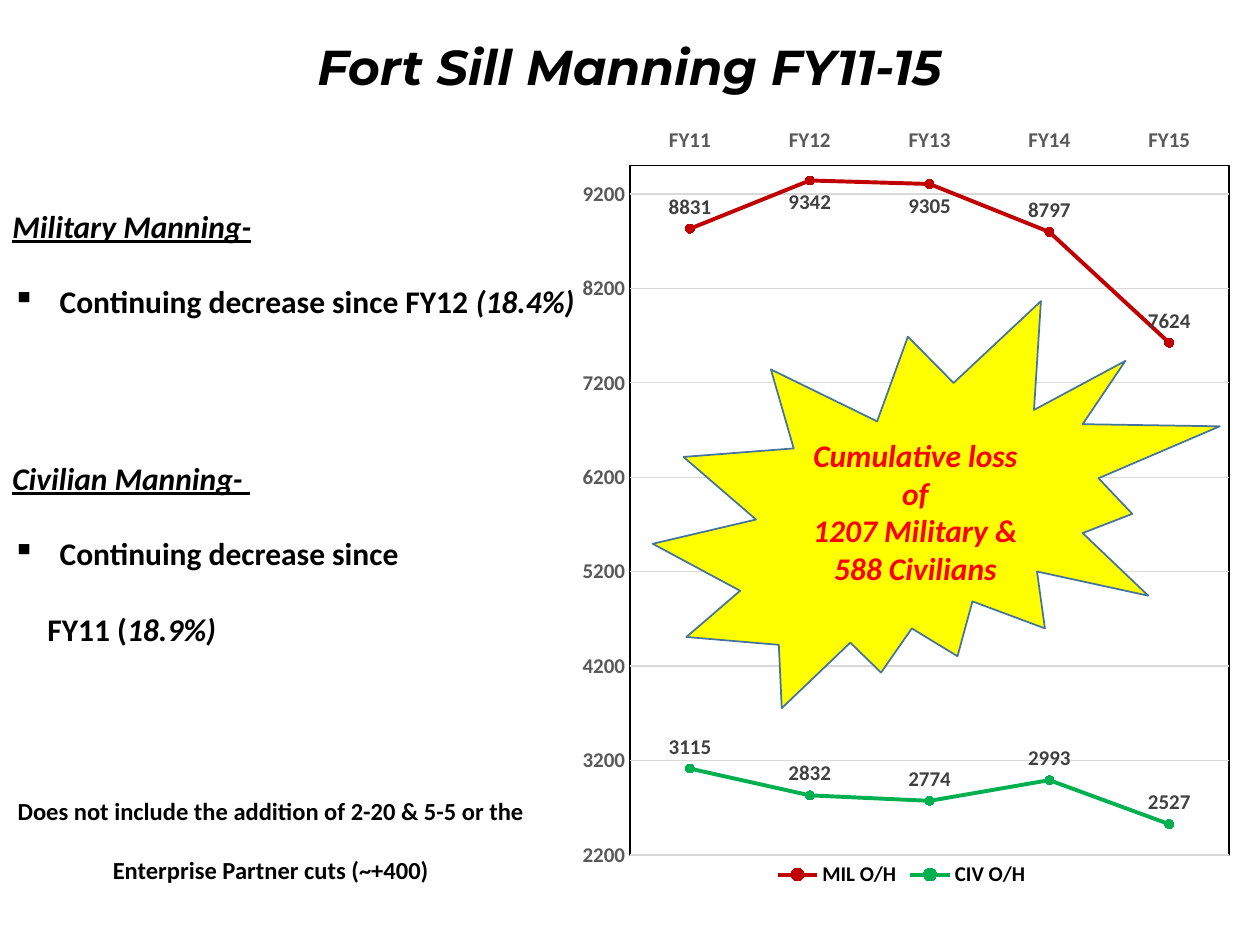
from dataclasses import dataclass, field

import lxml.etree
import pptx
import pptx.chart.data
import pptx.dml.color
import pptx.enum.chart
import pptx.enum.shapes
import pptx.enum.text
import pptx.oxml.ns
import pptx.util

Pt = pptx.util.Pt
qn = pptx.oxml.ns.qn
ALIGN = pptx.enum.text.PP_ALIGN
ANCHOR = pptx.enum.text.MSO_ANCHOR
LABEL = pptx.enum.chart.XL_LABEL_POSITION

YEARS = ["FY11", "FY12", "FY13", "FY14", "FY15"]
PLOT_LAYOUT = {"layoutTarget": "inner", "xMode": "edge", "yMode": "edge",
               "x": 0.109, "y": 0.076, "w": 0.863, "h": 0.877}
HEADING = {"size": Pt(18), "bold": True, "italic": True, "underline": True}
PLAIN = {"size": Pt(18), "bold": True}
ITALIC = {"size": Pt(18), "bold": True, "italic": True}
NOTE = {"size": Pt(14), "bold": True}
CHART_TEXT = {"size": Pt(12), "bold": True}


@dataclass
class Span:
    text: str
    style: dict
    colour: str = "000000"
    face: str = "Calibri"


@dataclass
class Para:
    spans: list[Span]
    format: dict = field(default_factory=dict)
    bullet: bool = False
    indent: float = 0


@dataclass
class Series:
    name: str
    values: list[int]
    colour: str
    marker: str
    below: tuple[int, ...] = ()


def rgb(value: str) -> pptx.dml.color.RGBColor:
    return pptx.dml.color.RGBColor.from_string(value)


def apply(target, values: dict) -> None:
    for name, value in values.items():
        setattr(target, name, value)


def style_font(font, values: dict, colour: str, face: str = "Calibri") -> None:
    apply(font, {"name": face, **values})
    font.color.rgb = rgb(colour)


def style_line(line, colour: str, width: float) -> None:
    line.color.rgb = rgb(colour)
    line.width = Pt(width)


def write(frame, paras: list[Para], settings: dict) -> None:
    apply(frame, {"word_wrap": True, **settings})
    for index, para in enumerate(paras):
        paragraph = frame.add_paragraph() if index else frame.paragraphs[0]
        apply(paragraph, para.format)
        properties = paragraph._p.get_or_add_pPr()
        if para.indent:
            properties.set("marL", str(Pt(para.indent)))
        if para.bullet:
            properties.set("indent", str(-Pt(para.indent)))
            lxml.etree.SubElement(properties, qn("a:buChar")).set("char", "▪")
        for span in para.spans:
            run = paragraph.add_run()
            run.text = span.text
            style_font(run.font, span.style, span.colour, span.face)


def add_text(page, area: tuple, paras: list[Para], settings: dict) -> None:
    box = page.shapes.add_textbox(*map(Pt, area))
    write(box.text_frame, paras, settings)


def add_burst(page, area: tuple, lines: list[str]) -> None:
    kind = pptx.enum.shapes.MSO_SHAPE.EXPLOSION2
    burst = page.shapes.add_shape(kind, *map(Pt, area))
    burst.shadow.inherit = False
    burst.fill.solid()
    burst.fill.fore_color.rgb = rgb("FFFF00")
    style_line(burst.line, "43739E", 1)
    paras = [Para([Span(line, ITALIC, "FF0000")], {"alignment": ALIGN.CENTER}) for line in lines]
    write(burst.text_frame, paras, {"vertical_anchor": ANCHOR.MIDDLE})


def style_plot_area(chart) -> None:
    plot_area = chart._chartSpace.chart.plotArea
    for old in plot_area.findall(qn("c:layout")):
        plot_area.remove(old)
    layout = lxml.etree.Element(qn("c:layout"))
    plot_area.insert(0, layout)
    manual = lxml.etree.SubElement(layout, qn("c:manualLayout"))
    for name, value in PLOT_LAYOUT.items():
        lxml.etree.SubElement(manual, qn(f"c:{name}")).set("val", str(value))
    border = lxml.etree.SubElement(plot_area, qn("c:spPr"))
    lxml.etree.SubElement(border, qn("a:noFill"))
    line = lxml.etree.SubElement(border, qn("a:ln"), w=str(Pt(0.75)))
    fill = lxml.etree.SubElement(line, qn("a:solidFill"))
    lxml.etree.SubElement(fill, qn("a:srgbClr")).set("val", "000000")


def style_axes(chart) -> None:
    marks = pptx.enum.chart.XL_TICK_MARK
    for axis in (chart.category_axis, chart.value_axis):
        apply(axis, {"major_tick_mark": marks.NONE, "minor_tick_mark": marks.NONE})
        style_font(axis.tick_labels.font, CHART_TEXT, "595959")
    chart.category_axis.tick_label_position = pptx.enum.chart.XL_TICK_LABEL_POSITION.HIGH
    style_line(chart.category_axis.format.line, "D9D9D9", 0.75)
    apply(chart.value_axis, {"minimum_scale": 2200, "maximum_scale": 9500,
                             "major_unit": 1000, "has_major_gridlines": True})
    style_line(chart.value_axis.major_gridlines.format.line, "D9D9D9", 0.75)
    chart.value_axis.format.line.fill.background()


def style_series(plotted, series: Series) -> None:
    plotted.smooth = False
    style_line(plotted.format.line, series.colour, 2.25)
    apply(plotted.marker, {"style": pptx.enum.chart.XL_MARKER_STYLE.CIRCLE, "size": 5})
    plotted.marker.format.fill.solid()
    plotted.marker.format.fill.fore_color.rgb = rgb(series.marker)
    style_line(plotted.marker.format.line, series.colour, 0.75)
    apply(plotted.data_labels, {"show_value": True, "position": LABEL.ABOVE})
    style_font(plotted.data_labels.font, CHART_TEXT, "404040")
    for index in series.below:
        label = plotted.points[index].data_label
        style_font(label.font, CHART_TEXT, "404040")
        label.position = LABEL.BELOW


def add_manning_chart(page, area: tuple, all_series: list[Series]) -> None:
    data = pptx.chart.data.CategoryChartData()
    data.categories = YEARS
    for series in all_series:
        data.add_series(series.name, series.values)
    kind = pptx.enum.chart.XL_CHART_TYPE.LINE_MARKERS
    chart = page.shapes.add_chart(kind, *map(Pt, area), data).chart
    apply(chart, {"has_title": False, "has_legend": True})
    style_font(chart.font, {"size": Pt(10)}, "000000")
    apply(chart.legend, {"position": pptx.enum.chart.XL_LEGEND_POSITION.BOTTOM,
                         "include_in_layout": False})
    style_font(chart.legend.font, CHART_TEXT, "000000")
    chart.plots[0].vary_by_categories = False
    style_plot_area(chart)
    style_axes(chart)
    for plotted, series in zip(chart.plots[0].series, all_series):
        style_series(plotted, series)


def main() -> None:
    """Build the Fort Sill manning slide."""
    deck = pptx.Presentation()
    apply(deck, {"slide_width": Pt(720), "slide_height": Pt(540)})
    page = deck.slides.add_slide(deck.slide_layouts[6])
    double = {"line_spacing": 2.0}
    title = Span("Fort Sill Manning FY11-15", {**ITALIC, "size": Pt(28)}, face="Montserrat")
    add_text(page, (71.3, 15.1, 576.7, 45.4), [Para([title], {"alignment": ALIGN.CENTER})],
             {"vertical_anchor": ANCHOR.MIDDLE})
    add_manning_chart(page, (316.8, 60.5, 396.7, 449.3), [
        Series("MIL O/H", [8831, 9342, 9305, 8797, 7624], "C00000", "C00000", (1, 2)),
        Series("CIV O/H", [3115, 2832, 2774, 2993, 2527], "00B050", "00CC00"),
    ])
    add_burst(page, (373, 172.1, 324, 232.6),
              ["Cumulative loss of", "1207 Military &", "588 Civilians"])
    add_text(page, (0, 92.9, 343.4, 138.2), [
        Para([Span("Military Manning-", HEADING)], double),
        Para([Span("Continuing decrease since FY12 ", PLAIN), Span("(18.4%)", ITALIC)],
             double, True, 27),
    ], {})
    note = "Does not include the addition of 2-20 & 5-5 or the Enterprise Partner cuts (~+400)"
    add_text(page, (0, 236.9, 309.6, 317.5), [
        Para([Span("Civilian Manning- ", HEADING)], double),
        Para([Span("Continuing decrease since", PLAIN)], double, True, 27),
        Para([Span("FY11 (", PLAIN), Span("18.9%)", ITALIC)], double, indent=20),
        Para([Span(note, NOTE)],
             {**double, "alignment": ALIGN.CENTER, "space_before": Pt(68)}),
    ], {})
    deck.save("out.pptx")


if __name__ == "__main__":
    main()
